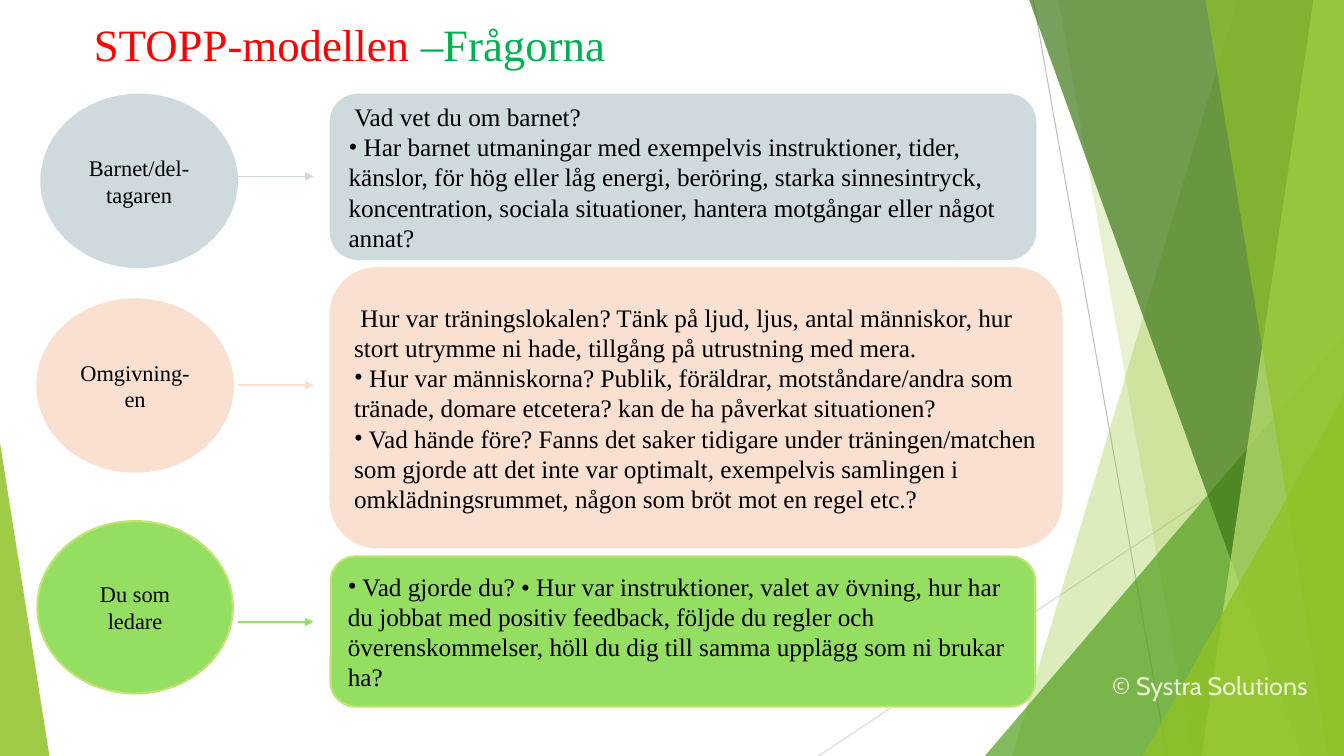
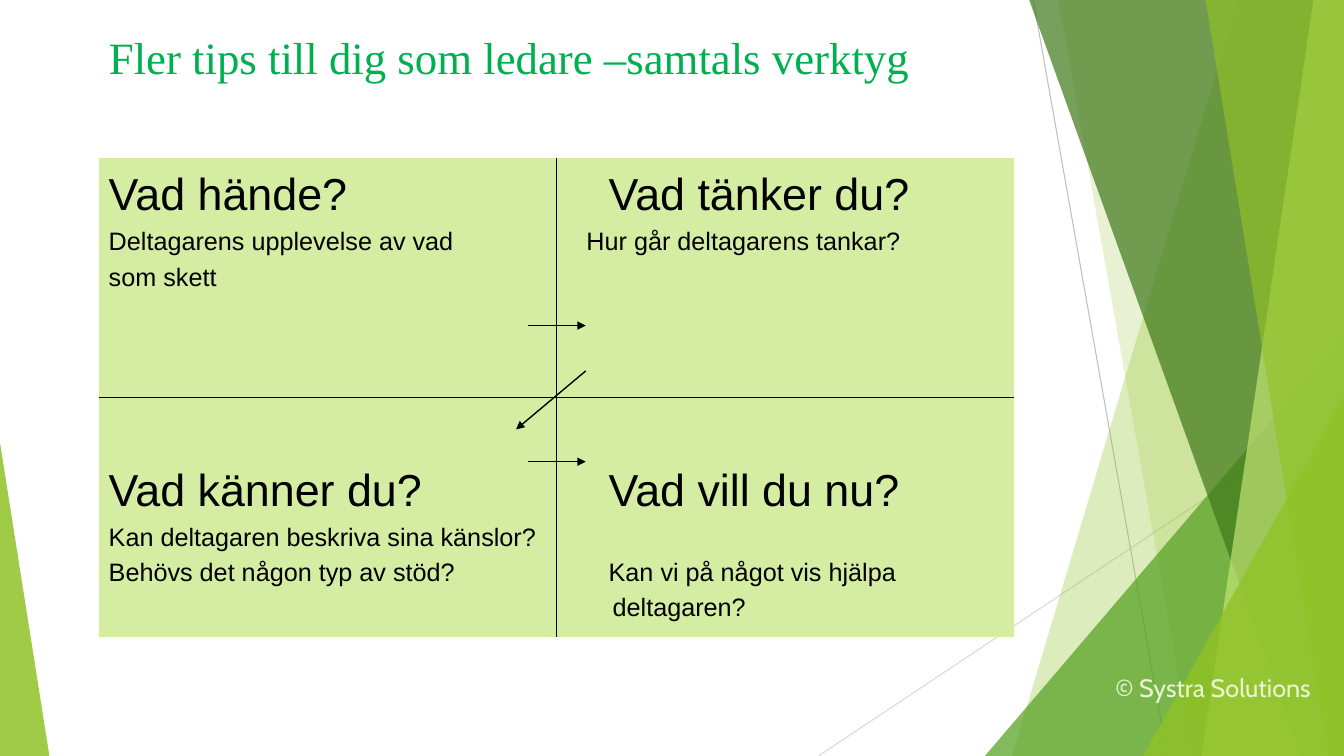
"""Builds two slides of coaching guidance: the STOPP questions and a talk tool."""
from lxml import etree
from pptx import Presentation
from pptx import util as u
from pptx.dml import color
from pptx.enum import shapes, text
from pptx.oxml import ns

WIDTH, HEIGHT = u.Inches(13.33), u.Inches(7.5)
SERIF, SANS, CREDIT_FONT = "Times New Roman", "Arial", "Cabin"
BLACK, RED, GREEN = "000000", "FF0000", "00B050"
LEAF, LIME, PALE_LIME = "90C226", "C0E474", "D5EDA2"
BLUE, PEACH, BRIGHT = "CFDADF", "FAE0D1", "94DE61"
OVAL = shapes.MSO_SHAPE.OVAL
ROUNDED = shapes.MSO_SHAPE.ROUNDED_RECTANGLE
RECTANGLE = shapes.MSO_SHAPE.RECTANGLE
TRIANGLE = shapes.MSO_SHAPE.ISOSCELES_TRIANGLE
LEFT, CENTER, RIGHT = (text.PP_ALIGN.LEFT, text.PP_ALIGN.CENTER,
                       text.PP_ALIGN.RIGHT)

QUESTION_ROWS = [
    (BLUE, BLUE, "Barnet/del-tagaren", (3.08, 12.53), 23.33,
     (24.6, 12.53, 52.43, 21.73),
     [(" Vad vet du om barnet?", False),
      (" Har barnet utmaningar med exempelvis instruktioner, tider, känslor, "
       "för hög eller låg energi, beröring, starka sinnesintryck, "
       "koncentration, sociala situationer, hantera motgångar eller något "
       "annat?", True)]),
    (PEACH, PEACH, "Omgivning-en", (2.78, 39.6), 50.93,
     (24.6, 35.47, 54.38, 36.93),
     [(" Hur var träningslokalen? Tänk på ljud, ljus, antal människor, hur "
       "stort utrymme ni hade, tillgång på utrustning med mera.", False),
      (" Hur var människorna? Publik, föräldrar, motståndare/andra som "
       "tränade, domare etcetera? kan de ha påverkat situationen?", True),
      (" Vad hände före? Fanns det saker tidigare under träningen/matchen "
       "som gjorde att det inte var optimalt, exempelvis samlingen i "
       "omklädningsrummet, någon som bröt mot en regel etc.?", True)]),
    (BRIGHT, LIME, "Du som ledare", (2.78, 68.93), 82.27,
     (24.6, 73.6, 52.43, 19.87),
     [(" Vad gjorde du? • Hur var instruktioner, valet av övning, hur har du "
       "jobbat med positiv feedback, följde du regler och överenskommelser, "
       "höll du dig till samma upplägg som ni brukar ha?", True)]),
]

QUADRANTS = [
    ((7.35, 21.33), [("Vad hände?", 32, 0, 0),
                     ("Deltagarens upplevelse av vad", 18, 4, 0),
                     ("som skett", 18, 4, 0)]),
    ((42.9, 21.33), [("Vad tänker du?", 32, 0, 0.22),
                     ("Hur går deltagarens tankar?", 18, 4, 0)]),
    ((7.35, 60.4), [("Vad känner du?", 32, 0, 0),
                    ("Kan deltagaren beskriva sina känslor?", 18, 4, 0),
                    ("Behövs det någon typ av stöd?", 18, 4, 0)]),
    ((42.9, 60.4), [("Vad vill du nu?", 32, 0, 0.22),
                    ("Kan vi på något vis hjälpa", 18, 29, 0.22),
                    ("deltagaren?", 18, 4, 0.26)]),
]


def rgb(code):
    """Turn a hex string into a colour."""
    return color.RGBColor.from_string(code)


def across(share):
    """Length for a percentage of the slide's width."""
    return u.Emu(round(WIDTH * share / 100))


def down(share):
    """Length for a percentage of the slide's height."""
    return u.Emu(round(HEIGHT * share / 100))


def area(left, top, width, height):
    """Lengths of a rectangle given in percentages of the slide."""
    return across(left), down(top), across(width), down(height)


def assign(target, values):
    """Set every attribute named in a dict of format values."""
    for name, value in values.items():
        setattr(target, name, value)


def add_span(para, words, size, face, code):
    """Append a formatted run to a paragraph."""
    span = para.add_run()
    span.text = words
    assign(span.font, {"size": u.Pt(size), "name": face, "bold": False})
    span.font.color.rgb = rgb(code)


def next_para(frame, align, **values):
    """Return the empty first paragraph, or a new one, aligned as asked."""
    first = frame.paragraphs[0]
    para = frame.add_paragraph() if first.runs else first
    assign(para, {"alignment": align, **values})
    return para


def paint(shape, fill, line=None, opacity=100):
    """Give a shape a flat fill and an optional outline."""
    shape.shadow.inherit = False
    shape.fill.solid()
    shape.fill.fore_color.rgb = rgb(fill)
    if opacity < 100:
        tone = shape.fill._xPr.find(".//" + ns.qn("a:srgbClr"))
        etree.SubElement(tone, ns.qn("a:alpha"), val=str(opacity * 1000))
    if line:
        shape.line.color.rgb = rgb(line)
        shape.line.width = u.Pt(1.5)
    else:
        shape.line.fill.background()
    return shape


def add_block(page, kind, place, fill, line=None, opacity=100):
    """Draw a preset shape."""
    block = page.shapes.add_shape(kind, *area(*place))
    assign(block.text_frame, {"word_wrap": True,
                              "vertical_anchor": text.MSO_ANCHOR.MIDDLE})
    return paint(block, fill, line, opacity)


def add_line(page, start, end, code, width=1, arrow=False):
    """Draw a straight line, with an arrowhead at its end if asked."""
    line = page.shapes.add_connector(
        shapes.MSO_CONNECTOR.STRAIGHT, across(start[0]), down(start[1]),
        across(end[0]), down(end[1]))
    line.line.color.rgb = rgb(code)
    line.line.width = u.Pt(width)
    if arrow:
        etree.SubElement(line.line._ln, ns.qn("a:tailEnd"), type="triangle")
    etree.SubElement(line._element.spPr, ns.qn("a:effectLst"))


def add_ribbon(page, top, bottom, fill, opacity):
    """Draw a slanted band that fills the slide out to its right edge."""
    builder = page.shapes.build_freeform(across(top), 0)
    builder.add_line_segments([(WIDTH, 0), (WIDTH, HEIGHT),
                               (across(bottom), HEIGHT)])
    paint(builder.convert_to_shape(), fill, opacity=opacity)


def add_corner(page, left, top, width, apex, fill, opacity):
    """Draw a right-angled triangle standing on the slide's lower edge."""
    corner = add_block(page, TRIANGLE, (left, top, width, 100 - top), fill,
                       opacity=opacity)
    corner.adjustments[0] = apex


def add_backdrop(page, layout):
    """Draw the green facets and move them into the shared layout."""
    add_line(page, (76.88, 0), (86.85, 100), "BFBFBF", 0.75)
    add_line(page, (100, 53.73), (60.9, 100), "D9D9D9", 0.75)
    add_ribbon(page, 92.1, 75.3, LEAF, 30)
    add_ribbon(page, 78.75, 88.73, LEAF, 20)
    add_corner(page, 73.28, 44.4, 26.72, 1, "54A021", 72)
    add_ribbon(page, 76.58, 96.83, "3F7819", 70)
    add_ribbon(page, 97.73, 89.4, LIME, 70)
    add_ribbon(page, 89.7, 98.85, LEAF, 65)
    add_corner(page, 85.05, 52.4, 14.95, 1, LEAF, 80)
    add_corner(page, 0, 58.53, 3.68, 0, LEAF, 85)
    facets = [item for item in page.shapes if not item.is_placeholder]
    for index, facet in enumerate(facets):
        layout.shapes._spTree.insert(2 + index, facet._element)


def set_title(page, place, spans):
    """Place the title and fill it with coloured runs."""
    title = page.shapes.title
    assign(title, dict(zip(("left", "top", "width", "height"), area(*place))))
    assign(title.text_frame, {"vertical_anchor": text.MSO_ANCHOR.TOP,
                              "word_wrap": True})
    para = next_para(title.text_frame, LEFT)
    for words, code in spans:
        add_span(para, words, 32, SERIF, code)


def add_credit(page, left, top):
    """Write the copyright line."""
    box = page.shapes.add_textbox(*area(left, top, 16.73, 5.33))
    box.text_frame.word_wrap = False
    para = next_para(box.text_frame, RIGHT)
    add_span(para, "© Systra Solutions", 18, CREDIT_FONT, "EAF6D1")


def add_question_row(page, fill, line, topic, corner, arrow_top, place, lines):
    """Draw a topic oval, its arrow and the box of questions."""
    oval = add_block(page, OVAL, (*corner, 14.55, 22.8), fill, line)
    add_span(next_para(oval.text_frame, CENTER), topic, 16, SERIF, BLACK)
    box = add_block(page, ROUNDED, place, fill, line)
    for words, bulleted in lines:
        para = next_para(box.text_frame, LEFT)
        if bulleted:
            props = para._p.get_or_add_pPr()
            assign_indent(props, 0)
            etree.SubElement(props, ns.qn("a:buFont"), typeface=SERIF)
            etree.SubElement(props, ns.qn("a:buChar"), char="•")
        add_span(para, words, 18, SERIF, BLACK)
    add_line(page, (17.7, arrow_top), (23.33, arrow_top), fill, arrow=True)


def assign_indent(props, inches):
    """Set the left margin of a paragraph without a hanging first line."""
    props.set("marL", str(u.Inches(inches)))
    props.set("indent", "0")


def add_quadrant(page, corner, lines):
    """Write a heading and its notes in one quarter of the panel."""
    box = page.shapes.add_textbox(*area(*corner, 34.05, 23))
    box.text_frame.word_wrap = True
    for words, size, before, indent in lines:
        para = next_para(box.text_frame, LEFT, space_before=u.Pt(before))
        assign_indent(para._p.get_or_add_pPr(), indent)
        add_span(para, words, size, SANS, BLACK)


def fill_questions(page):
    """Fill the slide with the STOPP questions."""
    set_title(page, (6.23, 1.6, 86.25, 12.8),
              [("STOPP-modellen ", RED), ("–Frågorna", GREEN)])
    for row in QUESTION_ROWS:
        add_question_row(page, *row)
    add_credit(page, 81.3, 88)


def fill_talk_tool(page):
    """Fill the slide with the four-part talk tool."""
    set_title(page, (7.35, 3.2, 86.25, 13.33),
              [("Fler tips till dig som ledare –samtals verktyg", GREEN)])
    left, top, width, height = panel = (7.35, 20.93, 68.1, 63.33)
    add_block(page, RECTANGLE, panel, PALE_LIME)
    middle, centre = left + width / 2, top + height / 2
    for quadrant in QUADRANTS:
        add_quadrant(page, *quadrant)
    add_line(page, (middle, top), (middle, top + height), BLACK)
    add_line(page, (left, centre), (left + width, centre), BLACK)
    for start, end in [((39.3, 43.07), (43.58, 43.07)),
                       ((43.58, 49.07), (38.4, 56.8)),
                       ((39.3, 61.07), (43.58, 61.07))]:
        add_line(page, start, end, BLACK, arrow=True)
    add_credit(page, 81.53, 88.27)


def main():
    """Build and save the deck."""
    deck = Presentation()
    assign(deck, {"slide_width": WIDTH, "slide_height": HEIGHT})
    layout = deck.slide_layouts.get_by_name("Title Only")
    pages = [deck.slides.add_slide(layout) for _ in range(2)]
    add_backdrop(pages[0], layout)
    fill_questions(pages[0])
    fill_talk_tool(pages[1])
    deck.save("out.pptx")


if __name__ == "__main__":
    main()
